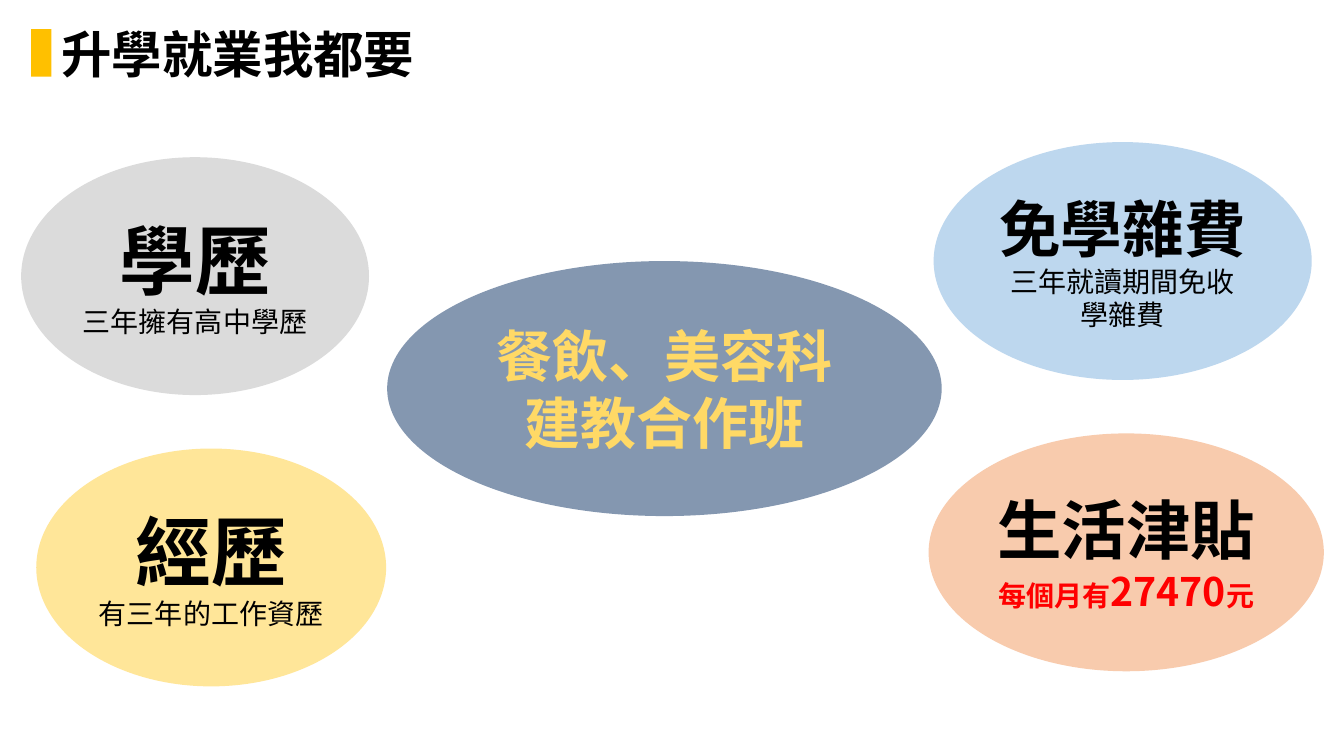
from pptx import Presentation
from pptx.dml.color import RGBColor
from pptx.enum.shapes import MSO_SHAPE as Shape
from pptx.enum.text import MSO_ANCHOR as Anchor, MSO_AUTO_SIZE as AutoSize, PP_ALIGN as Align
from pptx.oxml.ns import qn
from pptx.util import Inches, Pt

FONT = "Noto Sans CJK SC"
BLACK, RED, GOLD = "000000", "FF0000", "FFD966"
SMALL_HEIGHT = 2.36


def color(hex_code):
    """Turn a hex string into a colour."""
    return RGBColor.from_string(hex_code)


def place(item, left, top, width, height):
    """Position an item, in inches."""
    item.left, item.top = Inches(left), Inches(top)
    item.width, item.height = Inches(width), Inches(height)


def style_run(run, size, hex_code=BLACK, bold=True):
    """Format a run, including its East Asian typeface."""
    run.font.name, run.font.size, run.font.bold = FONT, Pt(size), bold
    run.font.color.rgb = color(hex_code)
    typeface = run.font._element.makeelement(qn("a:ea"), {"typeface": FONT})
    run.font._element.find(qn("a:latin")).addnext(typeface)


def add_block(slide, kind, box, fill):
    """Draw a flat, borderless shape."""
    block = slide.shapes.add_shape(kind, *map(Inches, box))
    block.shadow.inherit = False
    block.fill.solid()
    block.fill.fore_color.rgb = color(fill)
    block.line.fill.background()
    return block


def add_bubble(slide, box, fill, lines):
    """Draw an ellipse with centred lines made of (text, size, colour, bold) runs."""
    frame = add_block(slide, Shape.OVAL, box, fill).text_frame
    frame.word_wrap, frame.vertical_anchor = True, Anchor.MIDDLE
    for number, line in enumerate(lines):
        paragraph = frame.add_paragraph() if number else frame.paragraphs[0]
        paragraph.alignment = Align.CENTER
        for text, *look in line:
            run = paragraph.add_run()
            run.text = text
            style_run(run, *look)


def add_heading(slide, text):
    """Fill the title placeholder and put the accent bar beside it."""
    add_block(slide, Shape.RECTANGLE, (0.31, 0.29, 0.2, 0.47), "FFC000")
    title = slide.shapes.title
    place(title, 0.51, 0.27, 9.72, 0.49)
    frame = title.text_frame
    frame.text = text
    frame.word_wrap, frame.auto_size = True, AutoSize.NONE
    frame.vertical_anchor = Anchor.MIDDLE
    frame.margin_top, frame.margin_bottom = Inches(0.1), 0
    paragraph = frame.paragraphs[0]
    paragraph.alignment, paragraph.line_spacing = Align.LEFT, 0.9
    style_run(paragraph.runs[0], 36)


def main():
    """Build the slide and save it."""
    deck = Presentation()
    deck.slide_width, deck.slide_height = Inches(13.33), Inches(7.5)
    slide = deck.slides.add_slide(deck.slide_layouts[5])
    add_heading(slide, "升學就業我都要")
    bubbles = [
        ((0.21, 1.56, 3.45, SMALL_HEIGHT), "DBDBDB",
         [[("學歷", 54)], [("三年擁有高中學歷", 20, BLACK, False)]]),
        ((0.36, 4.45, 3.47, SMALL_HEIGHT), "FFE699",
         [[("經歷", 54)], [("有三年的工作資歷", 20, BLACK, False)]]),
        ((3.84, 2.59, 5.5, 2.53), "8497B0",
         [[("餐飲、美容科", 40, GOLD)], [("建教合作班", 40, GOLD)]]),
        ((9.21, 4.3, 3.92, SMALL_HEIGHT), "F8CBAD",
         [[("生活津貼", 46)],
          [("每個月有", 20, RED), ("27470", 28, RED), ("元", 20, RED)]]),
        ((9.26, 1.41, 3.75, SMALL_HEIGHT), "BDD7EE",
         [[("免學雜費", 44), ("三年就讀期間免收學雜費", 20, BLACK, False)]]),
    ]
    for box, fill, lines in bubbles:
        add_bubble(slide, box, fill, lines)
    deck.save("out.pptx")


if __name__ == "__main__":
    main()
